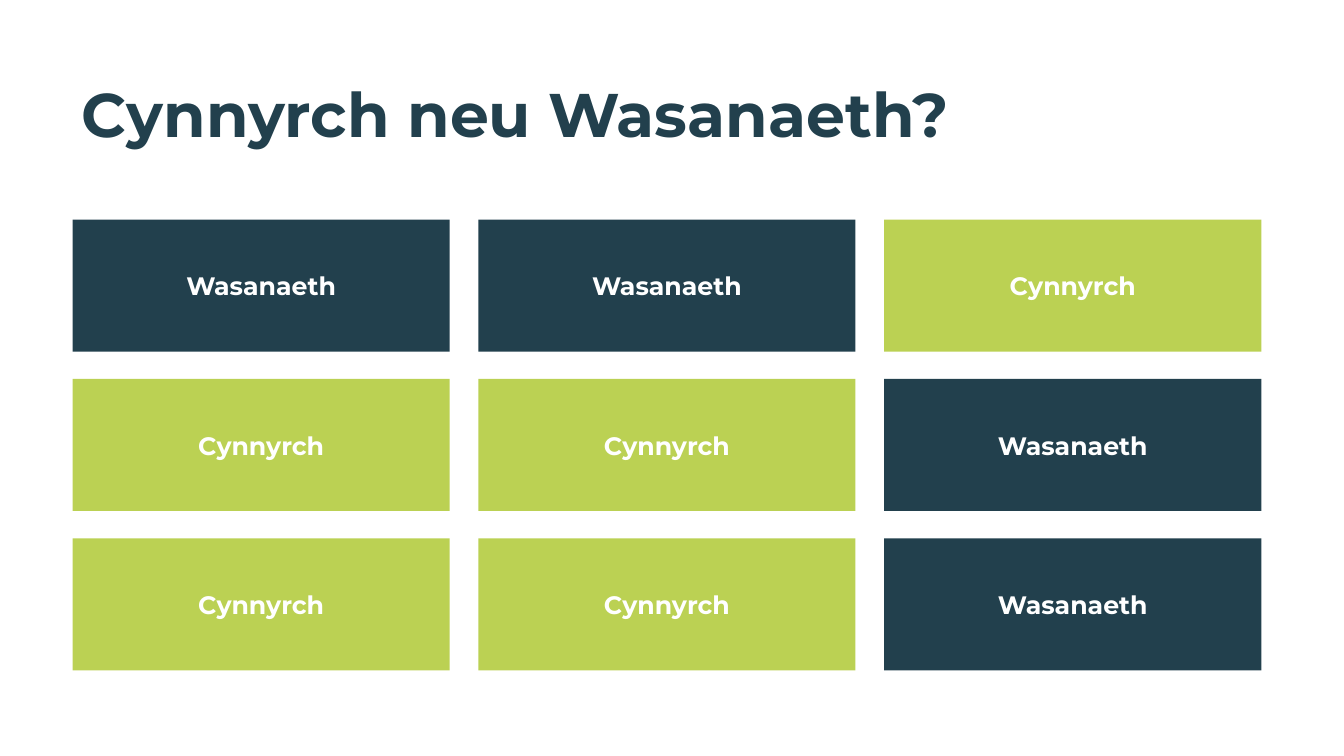
from pptx import Presentation
from pptx.dml.color import RGBColor
from pptx.enum.shapes import MSO_SHAPE
from pptx.enum.text import MSO_ANCHOR, PP_ALIGN
from pptx.util import Inches, Pt

RECTANGLE = MSO_SHAPE.RECTANGLE
MIDDLE = MSO_ANCHOR.MIDDLE
CENTER = PP_ALIGN.CENTER

NAVY = RGBColor(0x22, 0x40, 0x4D)
LIME = RGBColor(0xBB, 0xD1, 0x53)
WHITE = RGBColor(0xFF, 0xFF, 0xFF)
FONT = "Montserrat"

SERVICE = "Wasanaeth"
PRODUCT = "Cynnyrch"
CARD_COLORS = {SERVICE: NAVY, PRODUCT: LIME}
ANSWERS = [
    [SERVICE, SERVICE, PRODUCT],
    [PRODUCT, PRODUCT, SERVICE],
    [PRODUCT, PRODUCT, SERVICE],
]
CARD_WIDTH, CARD_HEIGHT = Inches(3.74), Inches(1.31)


def write_line(frame, text, size, color):
    frame.word_wrap = True
    frame.vertical_anchor = MIDDLE
    line = frame.paragraphs[0]
    line.text = text
    line.font.name = FONT
    line.font.size = Pt(size)
    line.font.bold = True
    line.font.color.rgb = color
    return line


def add_title(slide, left, top, width, height):
    title = slide.shapes.add_textbox(left, top, width, height)
    line = write_line(title.text_frame, "Cynnyrch neu Wasanaeth?", 44, NAVY)
    line.line_spacing = 0.9


def add_card(slide, left, top, answer):
    card = slide.shapes.add_shape(RECTANGLE, left, top, CARD_WIDTH, CARD_HEIGHT)
    card.shadow.inherit = False
    card.fill.solid()
    card.fill.fore_color.rgb = CARD_COLORS[answer]
    card.line.fill.background()
    write_line(card.text_frame, answer, 18, WHITE).alignment = CENTER


def add_answer_grid(slide, left, top, width, height):
    # Outer cards touch the edges of the box; gaps are equal
    column_step = (width - CARD_WIDTH) // (len(ANSWERS[0]) - 1)
    row_step = (height - CARD_HEIGHT) // (len(ANSWERS) - 1)
    for row, answers in enumerate(ANSWERS):
        for column, answer in enumerate(answers):
            add_card(slide, left + column * column_step,
                     top + row * row_step, answer)


def main():
    prs = Presentation()
    prs.slide_width, prs.slide_height = Inches(13.33), Inches(7.5)
    slide = prs.slides.add_slide(prs.slide_layouts[6])
    add_title(slide, Inches(0.71), Inches(0.84), Inches(12.11), Inches(0.66))
    add_answer_grid(slide, Inches(0.72), Inches(2.18), Inches(11.79), Inches(4.47))
    prs.save("out.pptx")


if __name__ == "__main__":
    main()
